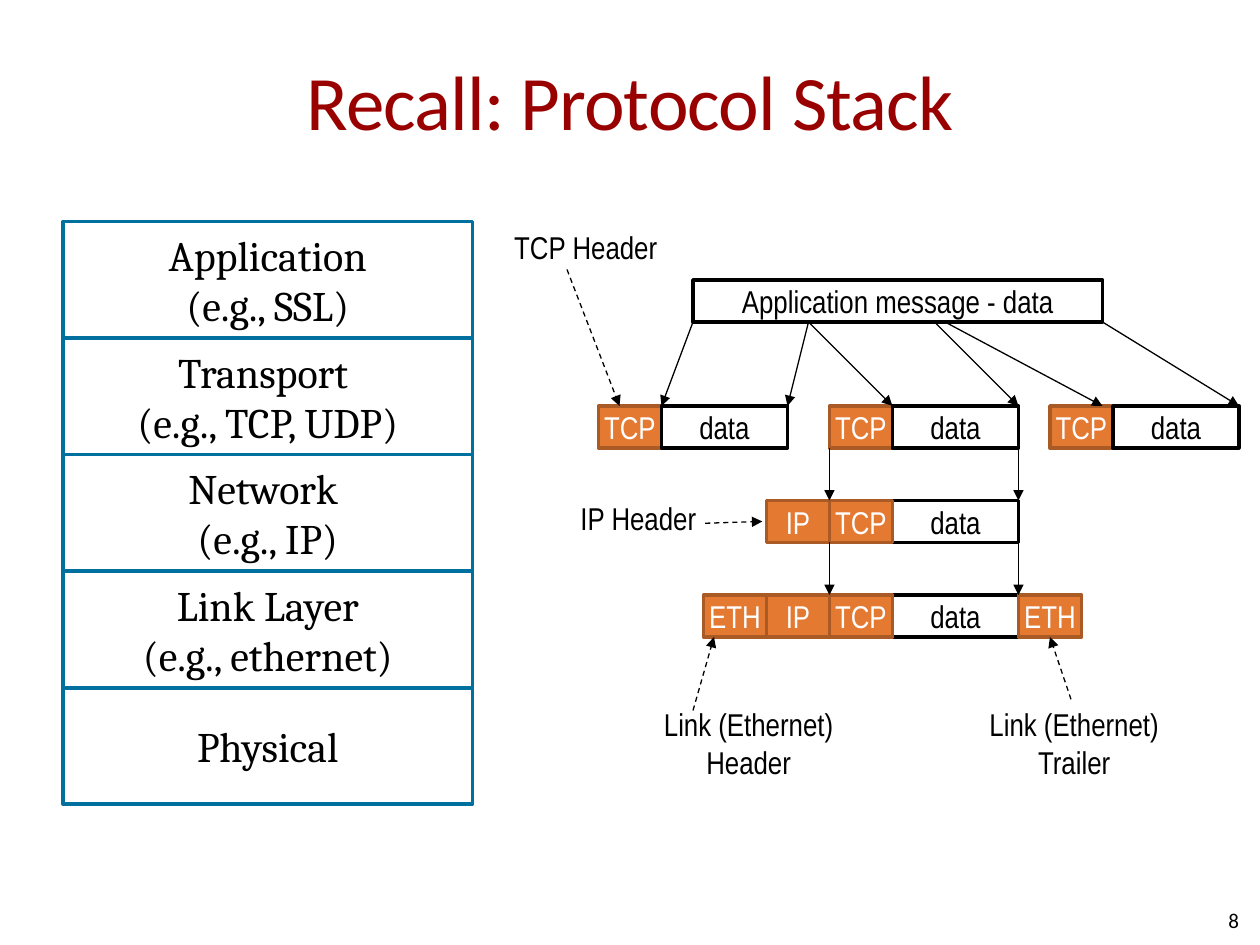
"""Build the protocol stack slide."""
import pptx
import pptx.dml.color
import pptx.enum.dml
import pptx.enum.shapes
import pptx.enum.text
import pptx.oxml
import pptx.oxml.ns
import pptx.util

Pt = pptx.util.Pt
RGBColor = pptx.dml.color.RGBColor
Align = pptx.enum.text.PP_ALIGN
Anchor = pptx.enum.text.MSO_ANCHOR
Fit = pptx.enum.text.MSO_AUTO_SIZE

BLACK = RGBColor(0x00, 0x00, 0x00)
WHITE = RGBColor(0xFF, 0xFF, 0xFF)
RED = RGBColor(0x99, 0x00, 0x00)
BLUE = RGBColor(0x00, 0x70, 0x9E)
AMBER = RGBColor(0xE4, 0x79, 0x32)
BROWN = RGBColor(0xA9, 0x5A, 0x25)

LAYER = {"name": "Cambria", "size": Pt(24)}
SMALL = {"name": "Arial Narrow", "size": Pt(18)}
HEAD = {"name": "Calibri", "size": Pt(44)}
PAGE = {"name": "Calibri", "size": Pt(12)}

BOX = {"word_wrap": False, "vertical_anchor": Anchor.MIDDLE}
LABEL = {"word_wrap": False, "auto_size": Fit.SHAPE_TO_FIT_TEXT}
FLUSH = {"word_wrap": True, "vertical_anchor": Anchor.MIDDLE,
         "auto_size": Fit.NONE, "margin_left": 0, "margin_right": 0}


def apply(item, values):
    """Set each attribute named in values."""
    for key, value in values.items():
        setattr(item, key, value)


class Deck:
    """Hold the style and the current slide."""

    def __init__(self):
        self.file = pptx.Presentation()
        apply(self.file, {"slide_width": Pt(720), "slide_height": Pt(540)})
        self.slide = self.file.slides.add_slide(self.file.slide_layouts[5])
        self.shapes = self.slide.shapes

    def fill_in(self, shape, text, font, color, frame, align=Align.CENTER):
        body = shape.text_frame
        body.text = text
        apply(body, frame)
        for para in body.paragraphs:
            para.alignment = align
            for run in para.runs:
                apply(run.font, font)
                run.font.color.rgb = color

    def title(self, text):
        shape = self.shapes.title
        apply(shape, {"left": Pt(36), "top": Pt(12),
                      "width": Pt(648), "height": Pt(90)})
        self.fill_in(shape, text, HEAD, RED, FLUSH)
        run = shape.text_frame.paragraphs[0].runs[0]
        run.font._element.set("spc", "-50")

    def text(self, x, y, w, h, text, font=SMALL, frame=LABEL,
             align=Align.CENTER):
        shape = self.shapes.add_textbox(Pt(x), Pt(y), Pt(w), Pt(h))
        self.fill_in(shape, text, font, BLACK, frame, align)

    def box(self, x, y, w, h, text, font=SMALL, fill=WHITE, edge=BLACK,
            ink=BLACK):
        kind = pptx.enum.shapes.MSO_SHAPE.RECTANGLE
        shape = self.shapes.add_shape(kind, Pt(x), Pt(y), Pt(w), Pt(h))
        shape.shadow.inherit = False
        shape.fill.solid()
        shape.fill.fore_color.rgb = fill
        shape.line.color.rgb = edge
        shape.line.width = Pt(2)
        self.fill_in(shape, text, font, ink, BOX)
        return shape

    def field(self, x, y, text):
        if text == "data":
            return self.box(x, y, 72, 24, text)
        return self.box(x, y, 36, 24, text, SMALL, AMBER, BROWN, WHITE)

    def arrow(self, x, y, to_x, to_y, dash=False, goal=None, side=0):
        kind = pptx.enum.shapes.MSO_CONNECTOR.STRAIGHT
        link = self.shapes.add_connector(kind, Pt(x), Pt(y), Pt(to_x), Pt(to_y))
        link.line.color.rgb = BLACK
        link.line.width = Pt(0.75)
        if dash:
            link.line.dash_style = pptx.enum.dml.MSO_LINE.DASH
        if goal is not None:
            link.end_connect(goal, side)
        space = pptx.oxml.ns.nsdecls("a")
        tip = pptx.oxml.parse_xml(f'<a:tailEnd {space} type="triangle"/>')
        link.line._get_or_add_ln().append(tip)
        bare = pptx.oxml.parse_xml(f"<a:effectLst {space}/>")
        link._element.spPr.append(bare)


def main():
    """Draw the slide and save it."""
    deck = Deck()
    deck.title("Recall: Protocol Stack")
    deck.text(540, 511, 168, 29, "8", PAGE, FLUSH, Align.RIGHT)

    layers = ["Application\v(e.g., SSL)", "Transport \v(e.g., TCP, UDP)",
              "Network \v(e.g., IP)", "Link Layer\v(e.g., ethernet)",
              "Physical"]
    for i, name in enumerate(layers):
        deck.box(36, 126.6 + 66.6 * i, 234, 66.6, name, LAYER, WHITE, BLUE)

    app, tcp, net, eth = 160, 232, 286, 340
    deck.box(396, app, 234, 24, "Application message - data")
    for x in (342, 474, 600):
        deck.field(x, tcp, "TCP")
        deck.field(x + 36, tcp, "data")
    for y, heads in ((net, ["TCP", "IP"]), (eth, ["TCP", "IP", "ETH"])):
        deck.field(510, y, "data")
        for i, name in enumerate(heads):
            deck.field(474 - 36 * i, y, name)
    end = deck.field(582, eth, "ETH")

    for x, to_x in ((396, 378), (462, 450), (462, 510),
                    (534, 582), (540, 630), (630, 708)):
        deck.arrow(x, app + 24, to_x, tcp)
    for y, to_y in ((tcp, net), (net, eth)):
        for x in (474, 582):
            deck.arrow(x, y + 24, x, to_y)

    deck.text(286.5, 126.6, 96.5, 29, "TCP Header")
    deck.text(324, 281.5, 81.5, 29, "IP Header")
    deck.text(372, 399.6, 111.6, 50.4, "Link (Ethernet)\nHeader")
    deck.text(558, 399.6, 111.6, 50.4, "Link (Ethernet)\nTrailer")
    deck.arrow(324, 154, 354, tcp, True)
    deck.arrow(403, 299, 435.6, 298, True)
    deck.arrow(396, 406, 408, eth + 24, True)
    deck.arrow(612, 399.6, 600, eth + 24, True, end, 2)
    deck.file.save("out.pptx")


if __name__ == "__main__":
    main()
